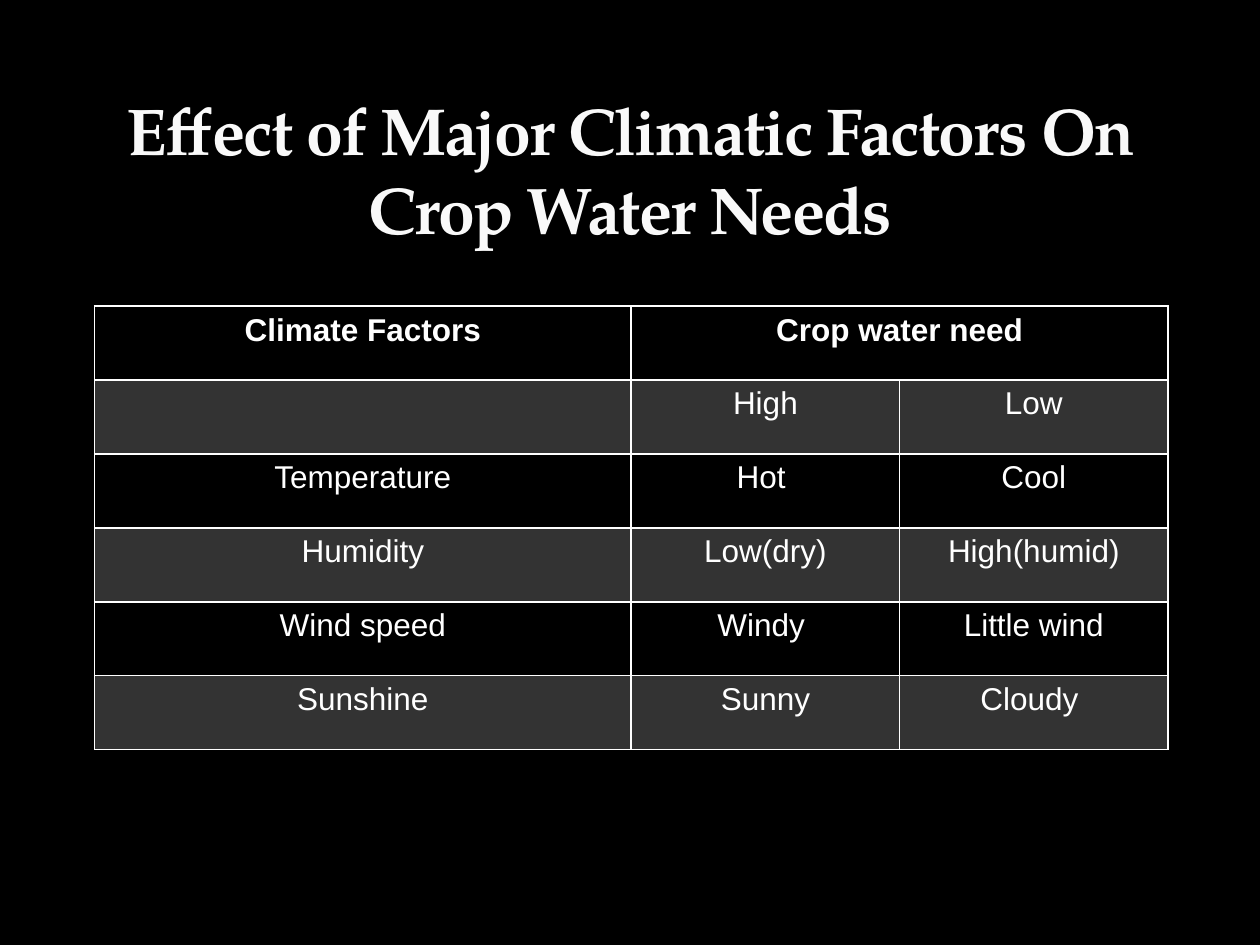
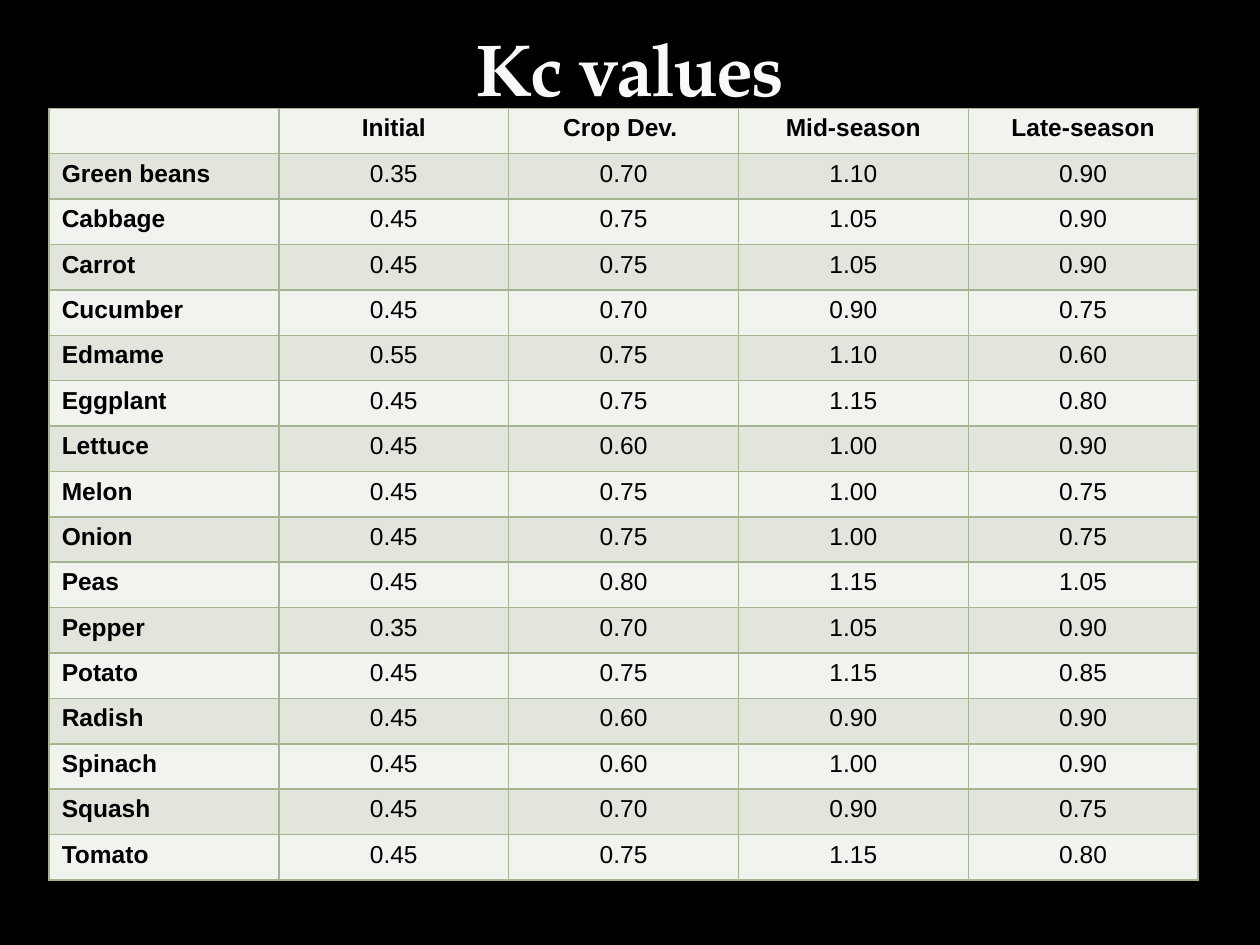
from lxml import etree
from pptx import Presentation
from pptx.dml.color import RGBColor
from pptx.enum.text import MSO_ANCHOR, MSO_AUTO_SIZE, PP_ALIGN
from pptx.oxml.ns import qn
from pptx.util import Inches, Pt

LEFT, CENTER = PP_ALIGN.LEFT, PP_ALIGN.CENTER
BOTTOM = MSO_ANCHOR.BOTTOM
NO_FIT = MSO_AUTO_SIZE.NONE
TITLE_ONLY = 5

COLORS = {
    "back": "000000",
    "title": "F9F9F9",
    "edge": "3C4422",
    "white": "FFFFFF",
    "black": "000000",
    "sage": "A5B592",
    "pale": "F0F3EE",
    "band": "E1E5DC",
}

FACTORS = [
    ("Climate Factors", "Crop water need", ""),
    ("", "High", "Low"),
    ("Temperature", "Hot ", "Cool"),
    ("Humidity", "Low(dry)", "High(humid)"),
    ("Wind speed", "Windy ", "Little wind"),
    ("Sunshine", "Sunny", "Cloudy "),
]

STAGES = ("", "Initial", "Crop Dev. ", "Mid-season", "Late-season")
CROPS = {
    "Green beans": (0.35, 0.70, 1.10, 0.90),
    "Cabbage": (0.45, 0.75, 1.05, 0.90),
    "Carrot": (0.45, 0.75, 1.05, 0.90),
    "Cucumber": (0.45, 0.70, 0.90, 0.75),
    "Edmame": (0.55, 0.75, 1.10, 0.60),
    "Eggplant": (0.45, 0.75, 1.15, 0.80),
    "Lettuce": (0.45, 0.60, 1.00, 0.90),
    "Melon": (0.45, 0.75, 1.00, 0.75),
    "Onion": (0.45, 0.75, 1.00, 0.75),
    "Peas": (0.45, 0.80, 1.15, 1.05),
    "Pepper": (0.35, 0.70, 1.05, 0.90),
    "Potato": (0.45, 0.75, 1.15, 0.85),
    "Radish": (0.45, 0.60, 0.90, 0.90),
    "Spinach": (0.45, 0.60, 1.00, 0.90),
    "Squash": (0.45, 0.70, 0.90, 0.75),
    "Tomato": (0.45, 0.75, 1.15, 0.80),
}


def color(name):
    return RGBColor.from_string(COLORS[name])


def fade(tint, alpha):
    if alpha < 100:
        etree.SubElement(tint, qn("a:alpha"), val=str(alpha * 1000))


def add_line(parent, tag, name, width, alpha=100):
    line = etree.SubElement(parent, qn(tag), w=str(Pt(width)))
    fill = etree.SubElement(line, qn("a:solidFill"))
    fade(etree.SubElement(fill, qn("a:srgbClr"), val=COLORS[name]), alpha)


def put_text(frame, words, size=18, face="Arial", tint="white", bold=False,
             align=CENTER):
    para = frame.paragraphs[0]
    para.alignment = align
    if not words:
        etree.SubElement(para._p, qn("a:endParaRPr"), sz=str(size * 100))
        return None
    run = para.add_run()
    run.text = words
    font = run.font
    font.size, font.name, font.bold = Pt(size), face, bold
    font.color.rgb = color(tint)
    return run


def add_page(deck, words, top, height, size):
    page = deck.slides.add_slide(deck.slide_layouts[TITLE_ONLY])
    page.background.fill.solid()
    page.background.fill.fore_color.rgb = color("back")
    title = page.shapes.title
    title.left, title.top = Inches(0.5), Inches(top)
    title.width, title.height = Inches(9), Inches(height)
    frame = title.text_frame
    frame.word_wrap = True
    frame.auto_size = NO_FIT
    frame.vertical_anchor = BOTTOM
    run = put_text(frame, words, size=size, face="TeX Gyre Pagella",
                   tint="title", bold=True)
    props = run.font._element
    props.set("spc", "-100")
    add_line(props, "a:ln", "edge", 0.25, alpha=25)
    props.insert(0, props[-1])
    return page


def paint(cell, name, alpha=100):
    if name is None:
        cell.fill.background()
        return
    cell.fill.solid()
    cell.fill.fore_color.rgb = color(name)
    fill = cell._tc.tcPr.find(qn("a:solidFill"))
    fade(fill.find(qn("a:srgbClr")), alpha)


def add_grid(page, rows, left, top, widths, height, edge, fills, alpha=100,
             labels=False, **style):
    shape = page.shapes.add_table(len(rows), len(widths), Inches(left),
                                  Inches(top), Inches(sum(widths)),
                                  Inches(height))
    grid = shape.table
    grid.first_row = grid.horz_banding = False
    for col, width in zip(grid.columns, widths):
        col.width = Inches(width)
    for r, row in enumerate(rows):
        grid.rows[r].height = Inches(height / len(rows))
        for c, words in enumerate(row):
            cell = grid.cell(r, c)
            label = labels and c == 0
            put_text(cell.text_frame, words, bold=r == 0 or label,
                     align=LEFT if label else CENTER, **style)
            props = cell._tc.get_or_add_tcPr()
            for side in "LRTB":
                add_line(props, "a:ln" + side, edge, 1)
            paint(cell, fills[r % 2], alpha)
    return grid


def main():
    deck = Presentation()
    deck.slide_width, deck.slide_height = Inches(10), Inches(7.5)

    page = add_page(deck, "Effect of Major Climatic Factors On Crop Water Needs",
                    0.69, 1.33, 37.8)
    grid = add_grid(page, FACTORS, 0.75, 2.43, (4.26, 2.13, 2.13), 3.52,
                    "white", (None, "white"), alpha=20)
    grid.cell(0, 1).merge(grid.cell(0, 2))

    page = add_page(deck, "Kc values", 0, 0.93, 42)
    rows = [STAGES]
    for crop, values in CROPS.items():
        rows.append((crop, *(f"{value:.2f}" for value in values)))
    add_grid(page, rows, 0.39, 0.86, [9.12 / 5] * 5, 6.13, "sage",
             ("pale", "band"), labels=True, size=14, tint="black")

    deck.save("out.pptx")


if __name__ == "__main__":
    main()
